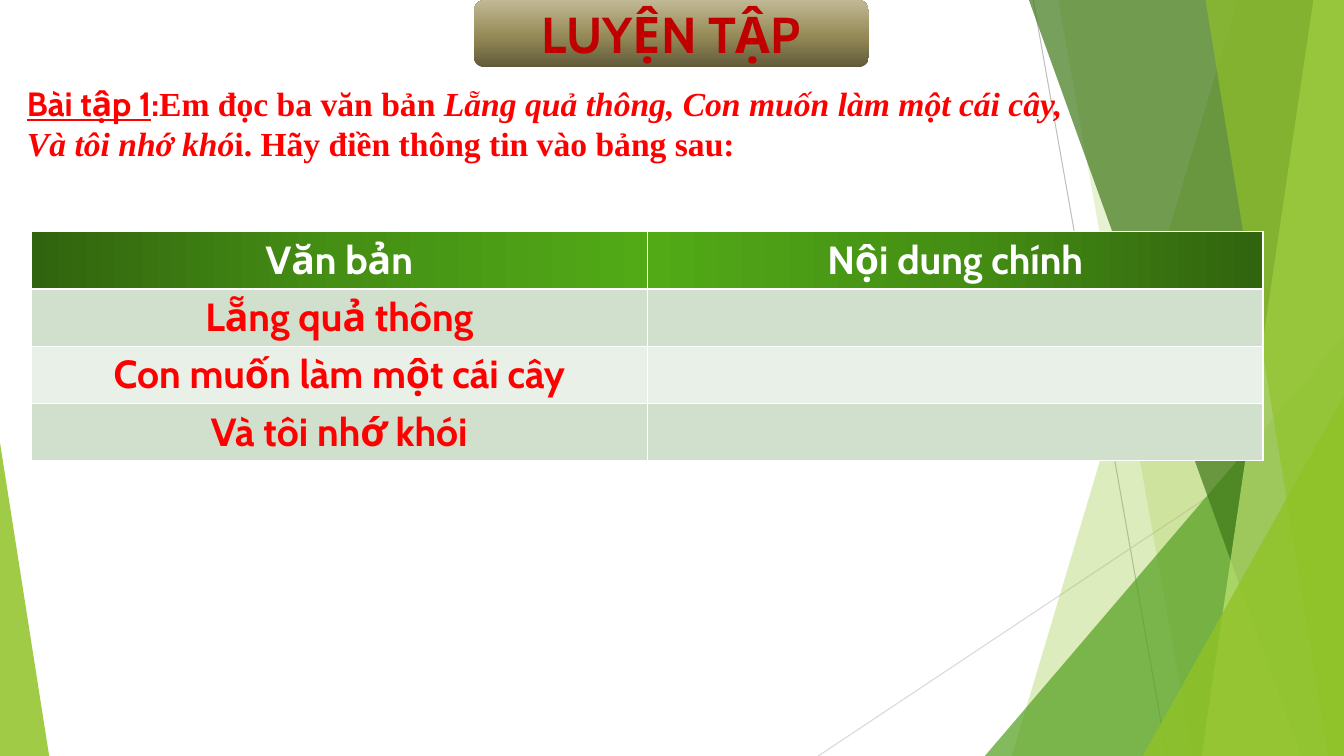
from dataclasses import dataclass

from lxml.etree import SubElement
from pptx import Presentation
from pptx.dml.color import RGBColor
from pptx.dml.fill import FillFormat
from pptx.enum.shapes import MSO_CONNECTOR as Connector, MSO_SHAPE as Shape
from pptx.enum.text import MSO_ANCHOR as Anchor, MSO_AUTO_SIZE as AutoSize, PP_ALIGN as Align
from pptx.oxml.ns import qn
from pptx.oxml.xmlchemy import BaseOxmlElement
from pptx.slide import Slide
from pptx.text.text import _Paragraph as Paragraph
from pptx.util import Cm, Pt

WHITE = RGBColor(0xFF, 0xFF, 0xFF)
RED = RGBColor(0xFF, 0x00, 0x00)
DARK_RED = RGBColor(0xC0, 0x00, 0x00)
LIME = RGBColor(0x90, 0xC2, 0x26)
PALE_LIME = RGBColor(0xC0, 0xE4, 0x74)
GREEN = RGBColor(0x54, 0xA0, 0x21)
DARK_GREEN = RGBColor(0x3F, 0x78, 0x19)
GREY = RGBColor(0xBF, 0xBF, 0xBF)
LIGHT_GREY = RGBColor(0xD9, 0xD9, 0xD9)
ODD_ROW = RGBColor(0xD1, 0xDF, 0xCD)
EVEN_ROW = RGBColor(0xE9, 0xF0, 0xE8)
BANNER_STOPS = [(0, RGBColor(0x61, 0x5A, 0x39)), (48, RGBColor(0x96, 0x8B, 0x58)),
                (100, RGBColor(0xC1, 0xB9, 0x95))]
HEADER_STOPS = [(0, RGBColor(0x31, 0x64, 0x0E)), (50, RGBColor(0x45, 0x8F, 0x14)),
                (100, RGBColor(0x52, 0xAA, 0x17))]
SANS, SERIF = "Cabin", "Times New Roman"
SLIDE_W, SLIDE_H = 33.87, 19.05


@dataclass
class Facet:
    """Area from a slanted left edge to the right side of the slide."""
    top_x: float
    bottom_x: float
    color: RGBColor
    opacity: int


@dataclass
class Corner:
    """Right triangle standing on the bottom of the slide."""
    left: float
    top: float
    width: float
    apex: float
    color: RGBColor
    opacity: int


@dataclass
class Ray:
    start: tuple[float, float]
    end: tuple[float, float]
    color: RGBColor


@dataclass
class Phrase:
    text: str
    font: str = SERIF
    italic: bool = False
    underline: bool = False


RAYS = [
    Ray((26.04, 0), (29.41, SLIDE_H), GREY),
    Ray((SLIDE_W, 10.24), (20.62, SLIDE_H), LIGHT_GREY),
]
DECOR = [
    Facet(31.19, 25.5, LIME, 30),
    Facet(26.67, 30.05, LIME, 20),
    Corner(24.82, 8.46, 9.05, 1, GREEN, 72),
    Facet(25.93, 32.79, DARK_GREEN, 70),
    Facet(33.1, 30.28, PALE_LIME, 70),
    Facet(30.38, 33.48, LIME, 65),
    Corner(28.8, 9.98, 5.07, 1, LIME, 80),
    Corner(0, 11.15, 1.24, 0, LIME, 85),
]
TASK = [
    Phrase("Bài tập 1", SANS, underline=True),
    Phrase(":", SANS),
    Phrase("Em đọc ba văn bản "),
    Phrase("Lẵng quả thông, Con muốn làm một cái cây, Và tôi nhớ khó", italic=True),
    Phrase("i. Hãy điền thông tin vào bảng sau:"),
]
HEADERS = ["Văn bản", "Nội dung chính"]
TEXTS = ["Lẵng quả thông", "Con muốn làm một cái cây", "Và tôi nhớ khói"]


def draw_ray(slide: Slide, ray: Ray) -> None:
    line = slide.shapes.add_connector(
        Connector.STRAIGHT, *(Cm(v) for v in (*ray.start, *ray.end)))
    line.line.color.rgb = ray.color
    line.line.width = Pt(0.75)
    SubElement(line._element.spPr, qn("a:effectLst"))


def draw_decor(slide: Slide, part: Facet | Corner) -> None:
    if isinstance(part, Facet):
        builder = slide.shapes.build_freeform(Cm(part.top_x), 0)
        corners = [(SLIDE_W, 0), (SLIDE_W, SLIDE_H), (part.bottom_x, SLIDE_H)]
        builder.add_line_segments([(Cm(x), Cm(y)) for x, y in corners], close=True)
        area = builder.convert_to_shape()
    else:
        area = slide.shapes.add_shape(
            Shape.ISOSCELES_TRIANGLE, Cm(part.left), Cm(part.top),
            Cm(part.width), Cm(SLIDE_H - part.top))
        area.adjustments[0] = part.apex
    area.shadow.inherit = False
    area.line.fill.background()
    area.fill.solid()
    area.fill.fore_color.rgb = part.color
    color = next(area._element.spPr.iter(qn("a:srgbClr")))
    SubElement(color, qn("a:alpha"), val=str(part.opacity * 1000))


def set_gradient(fill: FillFormat, owner: BaseOxmlElement,
                 stops: list[tuple[int, RGBColor]], angle: float) -> None:
    fill.gradient()
    fill.gradient_angle = angle
    stop_list = next(owner.iter(qn("a:gsLst")))
    for old_stop in list(stop_list):
        stop_list.remove(old_stop)
    for position, color in stops:
        stop = SubElement(stop_list, qn("a:gs"), pos=str(position * 1000))
        SubElement(stop, qn("a:srgbClr"), val=str(color))


def add_phrase(paragraph: Paragraph, phrase: Phrase, size: float, color: RGBColor) -> None:
    run = paragraph.add_run()
    run.text = phrase.text
    font = run.font
    font.name, font.size, font.bold = phrase.font, Pt(size), True
    font.italic, font.underline = phrase.italic, phrase.underline
    font.color.rgb = color


def draw_heading(slide: Slide) -> None:
    place = Cm(11.94), Cm(0), Cm(9.96), Cm(1.7)
    banner = slide.shapes.add_shape(Shape.ROUNDED_RECTANGLE, *place)
    banner.shadow.inherit = False
    banner.line.fill.background()
    set_gradient(banner.fill, banner._element.spPr, BANNER_STOPS, 90)

    heading = slide.shapes.title
    heading.left, heading.top, heading.width, heading.height = place
    frame = heading.text_frame
    frame.auto_size = AutoSize.NONE
    frame.vertical_anchor = Anchor.MIDDLE
    frame.paragraphs[0].alignment = Align.CENTER
    add_phrase(frame.paragraphs[0], Phrase("LUYỆN TẬP", SANS), 36, DARK_RED)
    # Bring the title in front of its banner
    banner._element.addnext(heading._element)


def draw_task(slide: Slide) -> None:
    task = slide.shapes.add_textbox(Cm(0.43), Cm(1.96), Cm(26.87), Cm(3.07))
    task.text_frame.word_wrap = True
    for phrase in TASK:
        add_phrase(task.text_frame.paragraphs[0], phrase, 24, RED)


def draw_table(slide: Slide) -> None:
    row_height = 1.44
    rows = len(TEXTS) + 1
    table = slide.shapes.add_table(
        rows, len(HEADERS), Cm(0.79), Cm(5.84), Cm(31.04), Cm(row_height * rows)).table

    for cell, header, angle in zip(table.rows[0].cells, HEADERS, (0, 180)):
        set_gradient(cell.fill, cell._tc, HEADER_STOPS, angle)
        paragraph = cell.text_frame.paragraphs[0]
        paragraph.alignment = Align.CENTER
        add_phrase(paragraph, Phrase(header, SANS), 28, WHITE)

    for number, text in enumerate(TEXTS, start=1):
        for cell in table.rows[number].cells:
            cell.fill.solid()
            cell.fill.fore_color.rgb = ODD_ROW if number % 2 else EVEN_ROW
        paragraph = table.cell(number, 0).text_frame.paragraphs[0]
        paragraph.alignment = Align.CENTER
        add_phrase(paragraph, Phrase(text, SANS), 28, RED)


def main() -> None:
    deck = Presentation()
    deck.slide_width, deck.slide_height = Cm(SLIDE_W), Cm(SLIDE_H)
    slide = deck.slides.add_slide(deck.slide_layouts[5])

    # Background decoration
    for ray in RAYS:
        draw_ray(slide, ray)
    for part in DECOR:
        draw_decor(slide, part)

    # Content
    draw_heading(slide)
    draw_task(slide)
    draw_table(slide)
    deck.save("out.pptx")


if __name__ == "__main__":
    main()
